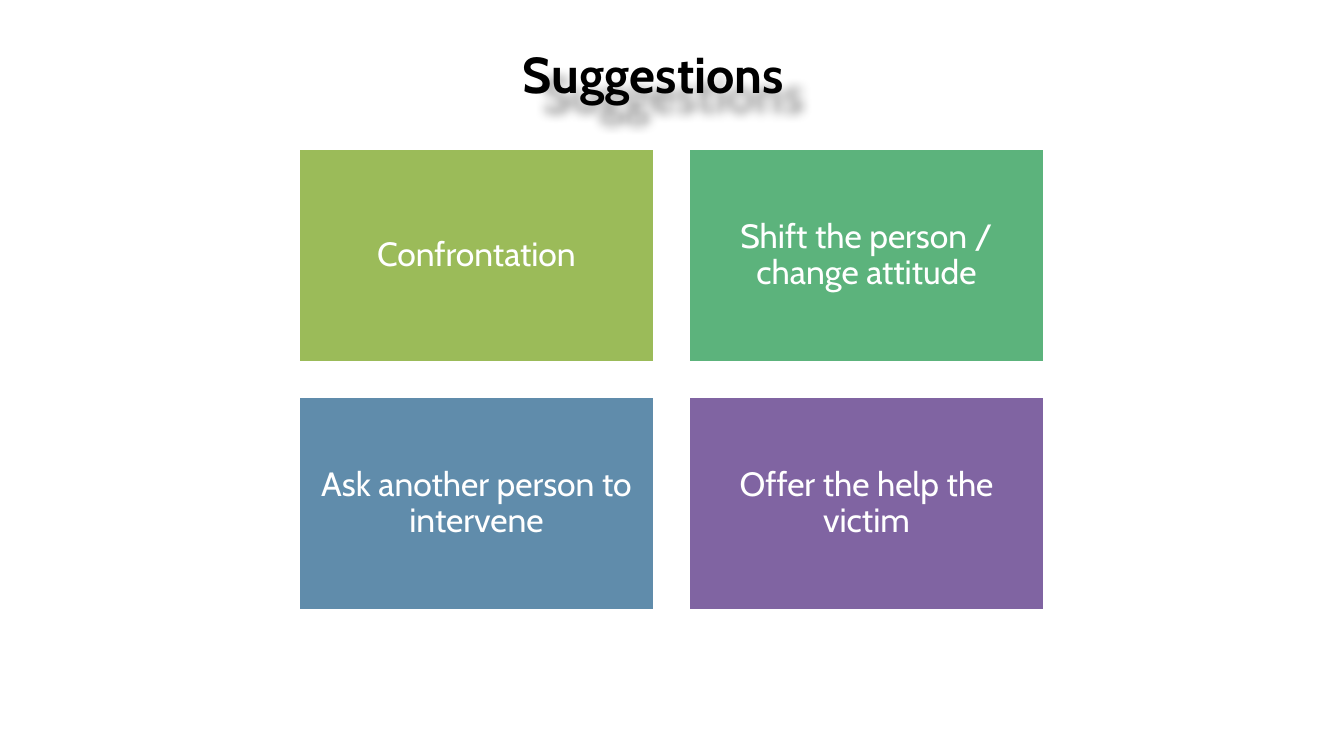
from lxml import etree
from pptx import Presentation
from pptx.dml.color import RGBColor
from pptx.enum.shapes import MSO_SHAPE
from pptx.enum.text import MSO_ANCHOR, MSO_AUTO_SIZE, PP_ALIGN
from pptx.oxml import parse_xml
from pptx.util import Pt

RECTANGLE = MSO_SHAPE.RECTANGLE
MIDDLE = MSO_ANCHOR.MIDDLE
GROW = MSO_AUTO_SIZE.SHAPE_TO_FIT_TEXT
CENTER = PP_ALIGN.CENTER

FONT = "Cabin"
COLORS = {
    "black": "000000",
    "white": "FFFFFF",
    "olive": "9BBB59",
    "green": "5CB37C",
    "blue": "608CAB",
    "purple": "8064A2",
}


def px(length):
    return round(length * 914400 / 100.8)


def color(name):
    return RGBColor.from_string(COLORS[name])


prs = Presentation()
prs.slide_width, prs.slide_height = px(1344), px(756)
slide = prs.slides.add_slide(prs.slide_layouts[6])

title = slide.shapes.add_textbox(px(513), px(38), px(287), px(72))
title.text_frame.word_wrap = False
title.text_frame.auto_size = GROW
heading = title.text_frame.paragraphs[0]
heading.text = "Suggestions"
heading.font.name = FONT
heading.font.size = Pt(36)
heading.font.bold = True
heading.font.color.rgb = color("black")

title.fill.background()
title_shadow = parse_xml(
    '<a:effectLst xmlns:a="http://schemas.openxmlformats.org/drawingml/2006/main">'
    f'<a:outerShdw blurRad="{px(11)}" dist="{px(28)}" dir="2700000" algn="tl" rotWithShape="0">'
    f'<a:srgbClr val="{COLORS["black"]}"><a:alpha val="40000"/></a:srgbClr>'
    "</a:outerShdw></a:effectLst>"
)
etree.ElementBase.append(title.element.spPr, title_shadow)

suggestions = [
    ("Confrontation", "olive"),
    ("Shift the person / change attitude", "green"),
    ("Ask another person to intervene", "blue"),
    ("Offer the help the victim", "purple"),
]
LEFT, TOP = 299, 149
TILE_WIDTH, TILE_HEIGHT = 355, 213
GAP = 35

for index, (suggestion, fill) in enumerate(suggestions):
    row, column = divmod(index, 2)
    tile = slide.shapes.add_shape(
        RECTANGLE,
        px(LEFT + column * (TILE_WIDTH + GAP)),
        px(TOP + row * (TILE_HEIGHT + GAP)),
        px(TILE_WIDTH),
        px(TILE_HEIGHT),
    )
    tile.shadow.inherit = False
    tile.fill.solid()
    tile.fill.fore_color.rgb = color(fill)
    tile.line.color.rgb = color("white")
    tile.line.width = Pt(1)

    frame = tile.text_frame
    frame.word_wrap = True
    frame.vertical_anchor = MIDDLE
    frame.margin_left = frame.margin_right = px(10)
    frame.margin_top = frame.margin_bottom = px(10)
    label = frame.paragraphs[0]
    label.text = suggestion
    label.alignment = CENTER
    label.line_spacing = 0.9
    label.font.name = FONT
    label.font.size = Pt(24)
    label.font.color.rgb = color("white")

prs.save("out.pptx")
